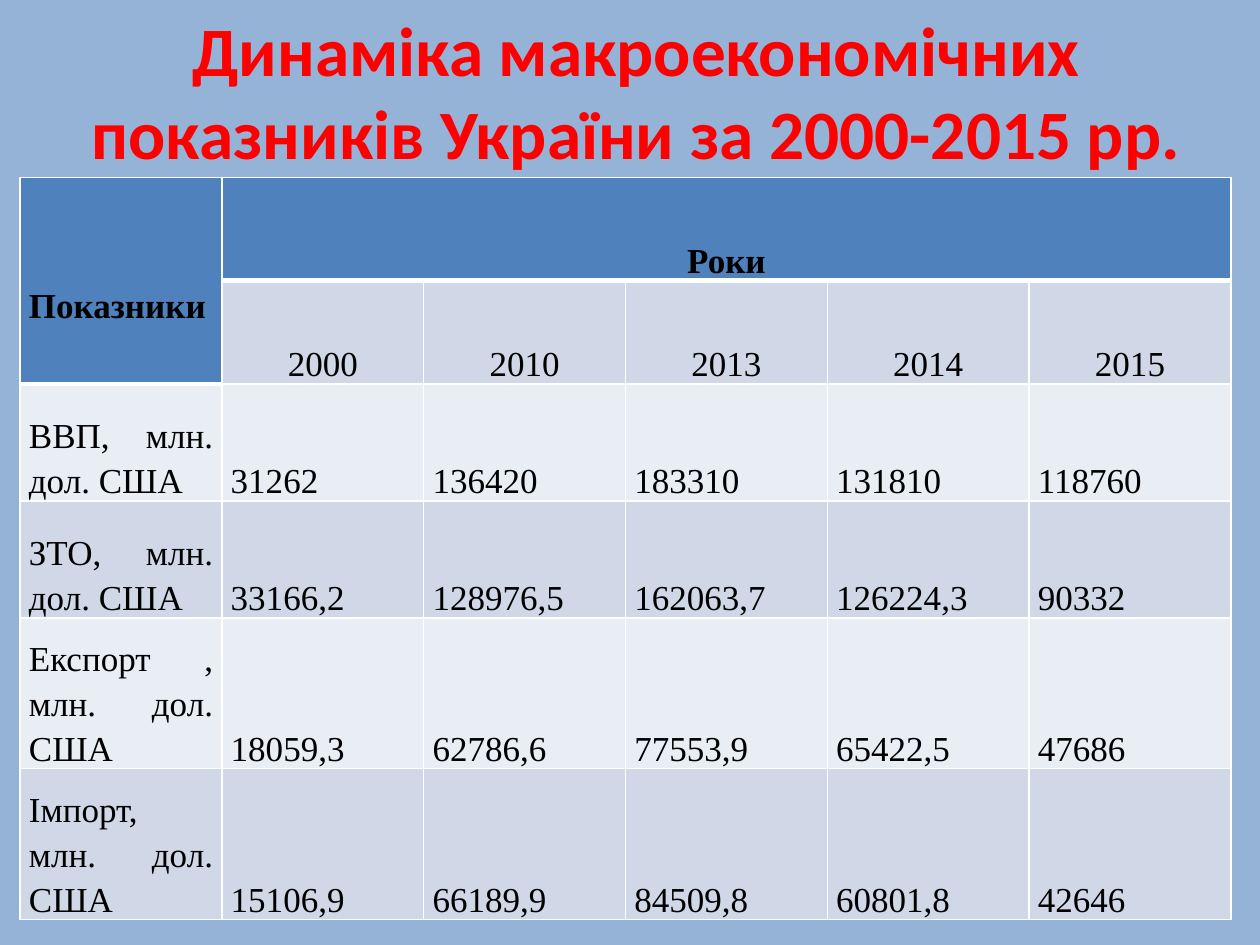
from lxml.etree import SubElement
from pptx import Presentation
from pptx.dml.color import RGBColor
from pptx.enum.text import MSO_ANCHOR, MSO_AUTO_SIZE, PP_ALIGN
from pptx.oxml.ns import qn
from pptx.util import Inches, Pt

HEADER_FILL, DARK_BAND, LIGHT_BAND = "4F81BD", "D0D8E8", "E9EDF4"
YEARS = ["2000", "2010", "2013", "2014", "2015"]
INDICATORS = [
    ["ВВП, млн. дол. США", "31262", "136420", "183310", "131810", "118760"],
    ["ЗТО, млн. дол. США", "33166,2", "128976,5", "162063,7", "126224,3", "90332"],
    ["Експорт , млн. дол. США", "18059,3", "62786,6", "77553,9", "65422,5", "47686"],
    ["Імпорт, млн. дол. США", "15106,9", "66189,9", "84509,8", "60801,8", "42646"],
]
ROW_HEIGHTS = [0.82, 0.82, 0.93, 0.93, 1.2, 1.2]


def color(value):
    return RGBColor.from_string(value)


def set_attributes(target, values):
    for name, value in values.items():
        setattr(target, name, value)


def write(frame, text, font, hex_color, **para_format):
    frame.text = text
    para = frame.paragraphs[0]
    set_attributes(para, para_format)
    span = para.runs[0]
    set_attributes(span.font, font)
    span.font.color.rgb = color(hex_color)


def set_borders(cell, widths):
    """Draw white cell edges, with widths in points keyed by side."""
    properties = cell._tc.get_or_add_tcPr()
    for index, side in enumerate("LRTB"):
        line = SubElement(properties, qn(f"a:ln{side}"), w=str(Pt(widths[side])))
        fill = SubElement(line, qn("a:solidFill"))
        SubElement(fill, qn("a:srgbClr"), val="FFFFFF")
        properties.insert(index, line)


def add_title(page, left, top, width, height):
    title = page.shapes.title
    set_attributes(title, {"left": left, "top": top, "width": width, "height": height})
    frame = title.text_frame
    set_attributes(frame, {
        "word_wrap": True, "auto_size": MSO_AUTO_SIZE.NONE,
        "vertical_anchor": MSO_ANCHOR.MIDDLE, "margin_top": 0, "margin_bottom": 0,
    })
    write(frame, "Динаміка макроекономічних показників України за 2000-2015 рр.",
          {"name": "Calibri", "size": Pt(39.6), "bold": True}, "FF0000",
          alignment=PP_ALIGN.CENTER)


def is_header(row, column):
    return row == 0 or (row == 1 and column == 0)


def format_cell(cell, row, column, text):
    header = is_header(row, column)
    band = DARK_BAND if row % 2 else LIGHT_BAND
    cell.fill.solid()
    cell.fill.fore_color.rgb = color(HEADER_FILL if header else band)
    below_header = row > 0 and not header and is_header(row - 1, column)
    set_borders(cell, {"L": 1, "R": 1, "T": 3 if below_header else 1,
                       "B": 3 if header else 1})
    set_attributes(cell, {
        "vertical_anchor": MSO_ANCHOR.BOTTOM, "margin_left": Inches(0.07),
        "margin_right": Inches(0.07), "margin_top": 0, "margin_bottom": 0,
    })
    if text:
        centered = row < 2 and column > 0
        write(cell.text_frame, text,
              {"name": "Times New Roman", "size": Pt(20), "bold": header}, "000000",
              alignment=PP_ALIGN.CENTER if centered else PP_ALIGN.JUSTIFY,
              line_spacing=1.15)


def add_indicator_table(page, left, top, width, height):
    rows = [["Показники", "Роки", "", "", "", ""], ["", *YEARS], *INDICATORS]
    columns = len(rows[0])
    table = page.shapes.add_table(len(rows), columns, left, top, width, height).table
    for column in table.columns:
        column.width = width // columns
    for row, share in zip(table.rows, ROW_HEIGHTS):
        row.height = int(height * share / sum(ROW_HEIGHTS))
    for row, texts in enumerate(rows):
        for column, text in enumerate(texts):
            format_cell(table.cell(row, column), row, column, text)
    corner = table.cell(0, 0)
    corner.merge(table.cell(1, 0))
    set_attributes(corner, {"vertical_anchor": MSO_ANCHOR.MIDDLE,
                            "margin_top": Inches(0.36)})
    table.cell(0, 1).merge(table.cell(0, columns - 1))


def main():
    deck = Presentation()
    set_attributes(deck, {"slide_width": Inches(10), "slide_height": Inches(7.5)})
    page = deck.slides.add_slide(deck.slide_layouts[5])
    page.background.fill.solid()
    page.background.fill.fore_color.rgb = color("95B3D7")
    add_title(page, Inches(0.55), Inches(0.05), Inches(9), Inches(1.33))
    add_indicator_table(page, Inches(0.16), Inches(1.41), Inches(9.61), Inches(5.89))
    deck.save("out.pptx")


if __name__ == "__main__":
    main()
